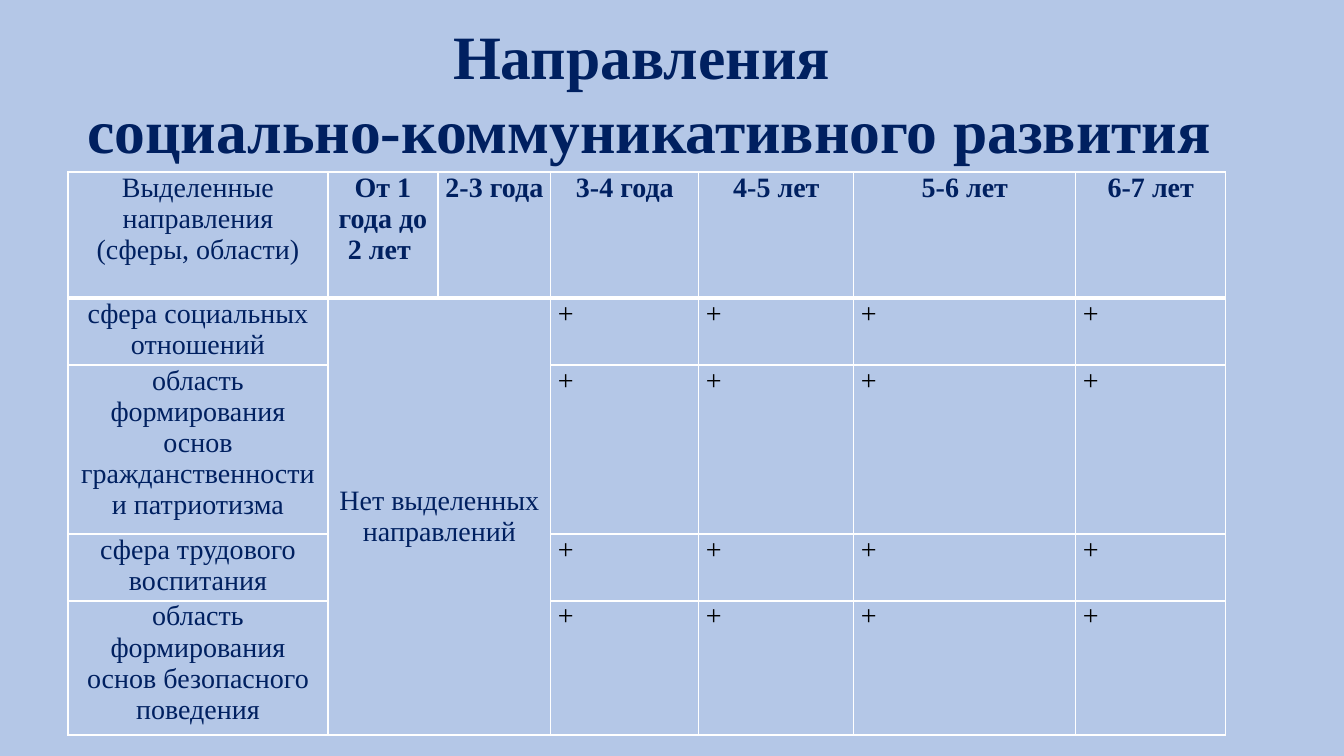
"""Build the slide on areas of social and communicative development by age."""
from pptx import Presentation
from pptx.dml.color import RGBColor
from pptx.enum.text import MSO_ANCHOR, MSO_AUTO_SIZE, PP_ALIGN
from pptx.oxml import parse_xml
from pptx.oxml.ns import nsdecls
from pptx.util import Pt

CENTER, JUSTIFY = PP_ALIGN.CENTER, PP_ALIGN.JUSTIFY
TOP, MIDDLE = MSO_ANCHOR.TOP, MSO_ANCHOR.MIDDLE
FIXED = MSO_AUTO_SIZE.NONE
PX = 914400 / 100.8
THEME = {
    "font": "Times New Roman",
    "back": "B4C7E7", "navy": "002060", "black": "000000", "rule": "FFFFFF",
    "title": 44, "text": 20, "thin": 1, "thick": 3,
}


def px(n):
    return round(n * PX)


def write(para, text, size, color, bold, align):
    para.alignment = align
    run = para.add_run()
    run.text = text
    font = run.font
    font.name = THEME["font"]
    font.size = Pt(THEME[size])
    font.bold = bold
    font.color.rgb = RGBColor.from_string(THEME[color])


prs = Presentation()
prs.slide_width, prs.slide_height = px(1344), px(756)
slide = prs.slides.add_slide(prs.slide_layouts[5])
back = slide.background.fill
back.solid()
back.fore_color.rgb = RGBColor.from_string(THEME["back"])

title = slide.shapes.title
title.left, title.top, title.width, title.height = map(px, (22, 13, 1226, 159))
frame = title.text_frame
frame.word_wrap = True
frame.auto_size = FIXED
frame.vertical_anchor = TOP
for i, line in enumerate(("Направления ", "социально-коммуникативного развития")):
    para = frame.add_paragraph() if i else frame.paragraphs[0]
    props = para._p.get_or_add_pPr()
    props.set("marL", str(px(29)))
    props.set("indent", "0")
    para.line_spacing = 1.0
    para.space_before = Pt(0)
    write(para, line, "title", "navy", True, CENTER)

ages = ["От 1 года до 2 лет ", "2-3 года", "3-4 года", "4-5 лет", "5-6 лет", "6-7 лет"]
areas = [
    "сфера социальных отношений",
    "область формирования основ гражданственности и патриотизма",
    "сфера трудового воспитания",
    "область формирования основ безопасного поведения",
]
rows = [["Выделенные направления (сферы, области)"] + ages]
rows += [[area, "", ""] + ["+"] * 4 for area in areas]
rows[1][1] = "Нет выделенных направлений"
widths = [260, 110, 113, 148, 155, 222, 150]
heights = [126, 67, 169, 67, 134]

table = slide.shapes.add_table(
    len(rows), len(widths), px(68), px(172), px(sum(widths)), px(sum(heights))
).table
table.horz_banding = False
for col, width in zip(table.columns, widths):
    col.width = px(width)
for row, height in zip(table.rows, heights):
    row.height = px(height)

for r, texts in enumerate(rows):
    for c, text in enumerate(texts):
        cell = table.cell(r, c)
        cell.margin_left = cell.margin_right = px(7)
        cell.margin_top = cell.margin_bottom = 0
        props = cell._tc.get_or_add_tcPr()
        for side in "LRTB":
            heavy = (r, side) in ((0, "B"), (1, "T"))
            wide = Pt(THEME["thick" if heavy else "thin"])
            props.append(parse_xml(
                f'<a:ln{side} {nsdecls("a")} w="{wide}"><a:solidFill>'
                f'<a:srgbClr val="{THEME["rule"]}"/></a:solidFill></a:ln{side}>'
            ))
        cell.fill.background()
        if text:
            plus = text == "+"
            write(cell.text_frame.paragraphs[0], text, "text",
                  "black" if plus else "navy", r == 0 and c > 0,
                  JUSTIFY if plus else CENTER)

none = table.cell(1, 1)
none.merge(table.cell(4, 2))
none.vertical_anchor = MIDDLE

prs.save("out.pptx")
